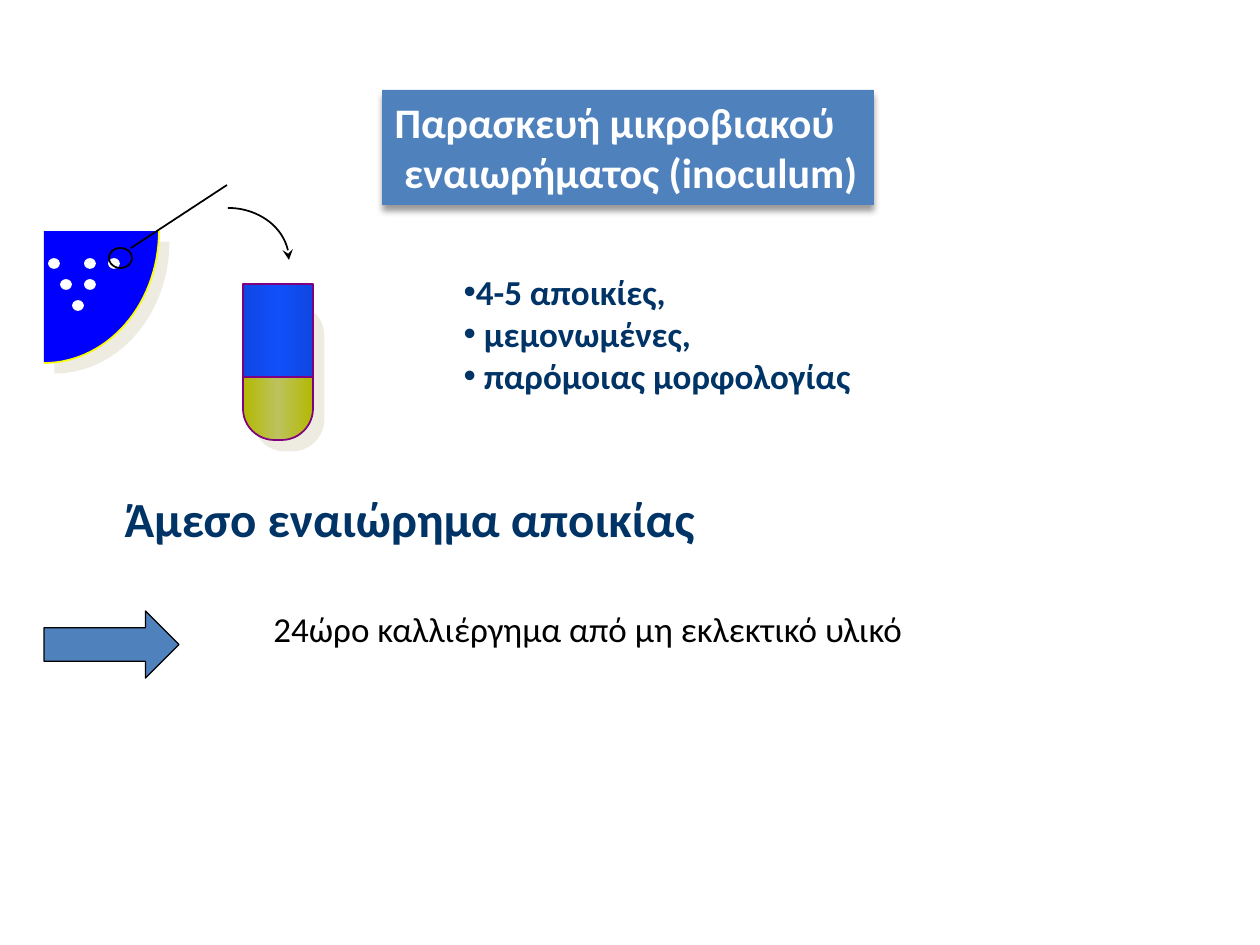
from copy import deepcopy
from dataclasses import dataclass
from math import cos, radians, sin
from typing import Optional

from lxml.etree import SubElement
from pptx import Presentation
from pptx.dml.color import RGBColor
from pptx.enum.shapes import MSO_CONNECTOR as Connector, MSO_SHAPE as Preset
from pptx.enum.text import MSO_ANCHOR as Anchor, MSO_AUTO_SIZE as AutoSize, PP_ALIGN as Align
from pptx.oxml.ns import qn
from pptx.util import Emu, Pt

PX = 914400 / 126
FONT = "Calibri"
WHITE = RGBColor(0xFF, 0xFF, 0xFF)
BLACK = RGBColor(0x00, 0x00, 0x00)
STEEL = RGBColor(0x4F, 0x81, 0xBD)
NAVY = RGBColor(0x00, 0x33, 0x66)
AGAR = RGBColor(0x00, 0x00, 0xFF)
RIM = RGBColor(0xFA, 0xFD, 0x00)
PURPLE = RGBColor(0x80, 0x00, 0x80)
BROTH_EDGE = RGBColor(0xB3, 0xB9, 0x00)
BROTH_MIDDLE = RGBColor(0xBD, 0xC2, 0x5E)
GLASS_EDGE = RGBColor(0x0F, 0x47, 0xE1)
GLASS_MIDDLE = RGBColor(0x11, 0x4F, 0xFB)
CREAM = RGBColor(0xEE, 0xEC, 0xE1)


@dataclass(frozen=True)
class Box:
    left: int
    top: int
    width: int
    height: int

    def emu(self) -> list:
        return [px(n) for n in (self.left, self.top, self.width, self.height)]


@dataclass(frozen=True)
class Style:
    size: int
    color: RGBColor
    bold: bool = True
    align: Align = Align.LEFT
    bullet: bool = False


@dataclass(frozen=True)
class Shadow:
    color: RGBColor
    opacity: int
    blur: float
    distance: float
    angle: int


@dataclass(frozen=True)
class Quarter:
    center_x: int
    center_y: int
    radius_x: int
    radius_y: int
    start: int

    def points(self, steps: int = 30) -> list:
        angles = [radians(self.start + 90 * i / steps) for i in range(steps + 1)]
        return [(px(self.center_x + self.radius_x * cos(a)),
                 px(self.center_y + self.radius_y * sin(a))) for a in angles]


def px(n: float) -> Emu:
    return Emu(round(n * PX))


def paint(shape, fill: Optional[RGBColor], line: Optional[RGBColor], width: float = 1) -> None:
    shape.shadow.inherit = False
    if fill is None:
        shape.fill.background()
    else:
        shape.fill.solid()
        shape.fill.fore_color.rgb = fill
    if line is None:
        shape.line.fill.background()
    else:
        shape.line.color.rgb = line
        shape.line.width = Pt(width)


def cast(shape, shadow: Shadow) -> None:
    shape.shadow.inherit = False
    effects = shape._element.spPr.find(qn("a:effectLst"))
    outer = SubElement(effects, qn("a:outerShdw"), blurRad=str(Pt(shadow.blur)),
                       dist=str(Pt(shadow.distance)), dir=str(shadow.angle * 60000),
                       algn="ctr", rotWithShape="0")
    color = SubElement(outer, qn("a:srgbClr"), val=str(shadow.color))
    SubElement(color, qn("a:alpha"), val=str(shadow.opacity * 1000))


def add_preset(shapes, preset: Preset, box: Box, fill: Optional[RGBColor],
               line: Optional[RGBColor], width: float = 1):
    shape = shapes.add_shape(preset, *box.emu())
    paint(shape, fill, line, width)
    return shape


def shade(shape, edge: RGBColor, middle: RGBColor) -> None:
    shape.fill.gradient()
    shape.fill.gradient_angle = 0
    stop_list = shape._element.spPr.find(qn("a:gradFill")).find(qn("a:gsLst"))
    stop_list.insert(1, deepcopy(stop_list[0]))
    stops = zip(shape.fill.gradient_stops, (0, 0.5, 1), (edge, middle, edge))
    for stop, position, color in stops:
        stop.position = position
        stop.color.rgb = color


def add_quarter(shapes, quarter: Quarter, fill: Optional[RGBColor], line: Optional[RGBColor]):
    first, *rest = quarter.points()
    if fill is not None:
        rest.append((px(quarter.center_x), px(quarter.center_y)))
    builder = shapes.build_freeform(*first)
    builder.add_line_segments(rest, close=fill is not None)
    shape = builder.convert_to_shape()
    paint(shape, fill, line)
    return shape


def write(shape, box: Box, lines: list, style: Style, wrap: bool = True) -> None:
    shape.left, shape.top, shape.width, shape.height = box.emu()
    frame = shape.text_frame
    frame.word_wrap = wrap
    frame.auto_size = AutoSize.NONE
    frame.vertical_anchor = Anchor.TOP
    for i, line in enumerate(lines):
        paragraph = frame.add_paragraph() if i else frame.paragraphs[0]
        if style.bullet:
            properties = paragraph._p.get_or_add_pPr()
            properties.set("marL", "0")
            properties.set("indent", "0")
            SubElement(properties, qn("a:buFont"), typeface="Arial")
            SubElement(properties, qn("a:buChar"), char="•")
        paragraph.alignment = style.align
        paragraph.space_before = Pt(0)
        run = paragraph.add_run()
        run.text = line
        run.font.name = FONT
        run.font.size = Pt(style.size)
        run.font.bold = style.bold
        run.font.color.rgb = style.color


def draw_plate(shapes) -> None:
    plate = Quarter(44, 231, 115, 132, 0)
    agar = add_quarter(shapes, plate, AGAR, None)
    cast(agar, Shadow(CREAM, 100, 0, 8.5, 45))
    add_quarter(shapes, plate, None, RIM)
    for row, columns in enumerate([(0, 3, 5), (1, 3), (2,)]):
        for column in columns:
            colony = Box(49 + 12 * column, 259 + 21 * row, 10, 9)
            add_preset(shapes, Preset.OVAL, colony, WHITE, WHITE)


def draw_loop(shapes) -> None:
    add_preset(shapes, Preset.OVAL, Box(109, 248, 23, 20), None, BLACK)
    handle = shapes.add_connector(Connector.STRAIGHT, px(131), px(248), px(227), px(185))
    handle.line.color.rgb = BLACK
    handle.line.width = Pt(1)
    SubElement(handle._element.spPr, qn("a:effectLst"))
    transfer = add_quarter(shapes, Quarter(228, 260, 61, 52, -90), None, BLACK)
    SubElement(transfer.line._get_or_add_ln(), qn("a:tailEnd"), type="stealth")


def draw_tube(shapes) -> None:
    broth = add_preset(shapes, Preset.ROUNDED_RECTANGLE, Box(243, 294, 70, 146), None, PURPLE)
    broth.adjustments[0] = 0.45
    shade(broth, BROTH_EDGE, BROTH_MIDDLE)
    cast(broth, Shadow(CREAM, 100, 0, 8.5, 45))
    glass = add_preset(shapes, Preset.RECTANGLE, Box(243, 284, 70, 93), None, PURPLE)
    shade(glass, GLASS_EDGE, GLASS_MIDDLE)


def main() -> None:
    deck = Presentation()
    deck.slide_width, deck.slide_height = px(1260), px(945)
    slide = deck.slides.add_slide(deck.slide_layouts[1])
    shapes = slide.shapes

    title = shapes.title
    title.fill.solid()
    title.fill.fore_color.rgb = STEEL
    write(title, Box(382, 90, 492, 115),
          ["Παρασκευή μικροβιακού", " εναιωρήματος (inoculum)"], Style(24, WHITE), wrap=False)
    cast(title, Shadow(BLACK, 40, 4, 3, 90))

    add_preset(shapes, Preset.RIGHT_ARROW, Box(44, 611, 135, 67), STEEL, BLACK, 0.75)
    draw_plate(shapes)
    draw_loop(shapes)
    draw_tube(shapes)

    write(slide.placeholders[1], Box(451, 264, 725, 140),
          ["4-5 αποικίες,", " μεμονωμένες,", " παρόμοιας μορφολογίας"],
          Style(20, NAVY, bullet=True))
    captions = [
        (Box(0, 482, 819, 72), "Άμεσο εναιώρημα αποικίας", Style(28, NAVY, align=Align.CENTER)),
        (Box(0, 601, 1176, 55), "24ώρο καλλιέργημα από μη εκλεκτικό υλικό",
         Style(20, BLACK, bold=False, align=Align.CENTER)),
    ]
    for box, caption, style in captions:
        write(shapes.add_textbox(*box.emu()), box, [caption], style)

    deck.save("out.pptx")


if __name__ == "__main__":
    main()
